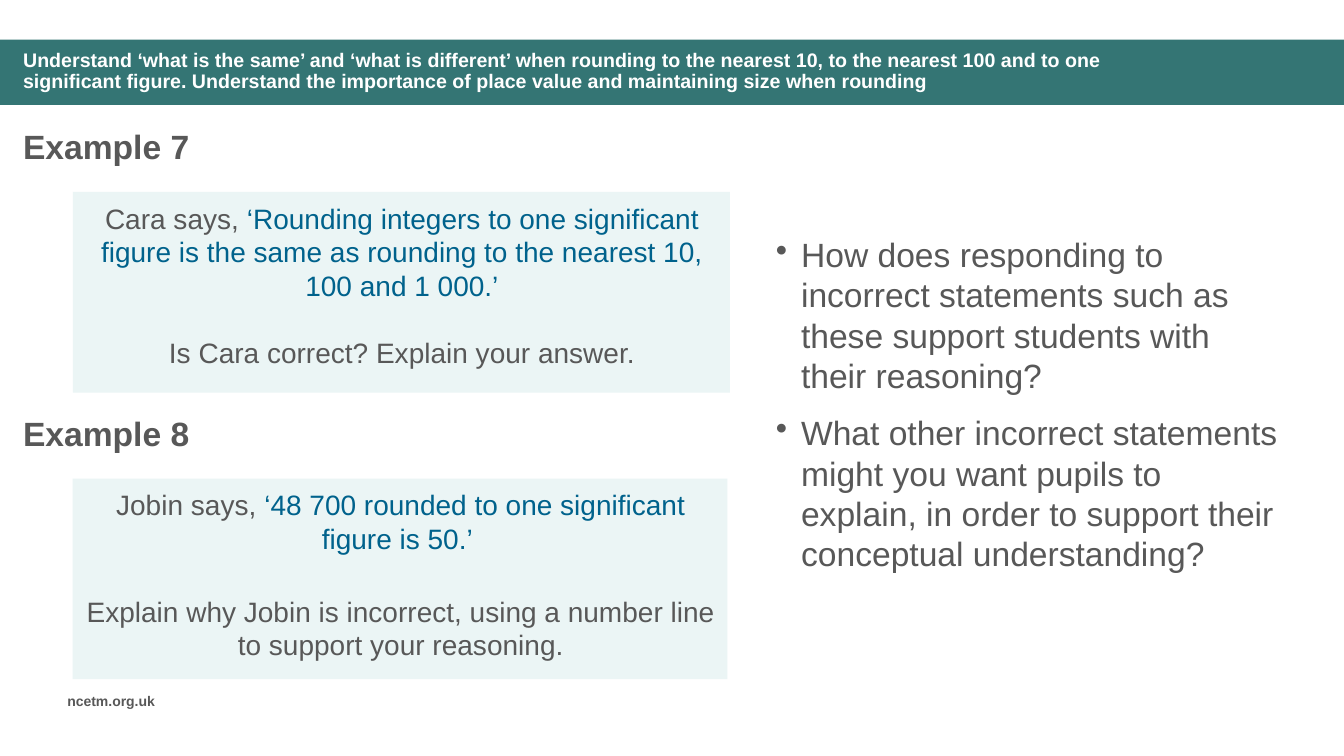
"""Build the slide on rounding statements with Examples 7 and 8."""
from lxml import etree
from pptx import Presentation
from pptx.dml.color import RGBColor
from pptx.enum.shapes import MSO_SHAPE
from pptx.enum.text import MSO_ANCHOR, PP_ALIGN
from pptx.oxml.ns import qn
from pptx.util import Pt

COLOURS = {
    "banner": "347574",
    "panel": "EBF5F5",
    "text": "585858",
    "quote": "00628C",
    "white": "FFFFFF",
}

presentation = Presentation()
presentation.slide_width = Pt(960)
presentation.slide_height = Pt(540)
slide = presentation.slides.add_slide(presentation.slide_layouts[6])


def add_block(left, top, width, height, fill):
    block = slide.shapes.add_shape(
        MSO_SHAPE.RECTANGLE, Pt(left), Pt(top), Pt(width), Pt(height))
    block.shadow.inherit = False
    block.fill.solid()
    block.fill.fore_color.rgb = RGBColor.from_string(COLOURS[fill])
    block.line.fill.background()


def add_text(box, paragraphs, size, bold=False, colour="text", anchor=MSO_ANCHOR.TOP):
    frame = slide.shapes.add_textbox(*[Pt(length) for length in box]).text_frame
    frame.word_wrap = True
    frame.vertical_anchor = anchor
    for index, text in enumerate(paragraphs):
        paragraph = frame.paragraphs[0] if index == 0 else frame.add_paragraph()
        paragraph.text = text
        paragraph.font.name = "Arial"
        paragraph.font.size = Pt(size)
        paragraph.font.bold = bold
        paragraph.font.color.rgb = RGBColor.from_string(COLOURS[colour])
    return frame.paragraphs


add_block(0, 28.3, 960, 46.7, "banner")
title = add_text(
    (9.4, 24.5, 833.8, 53.3),
    ["Understand ‘what is the same’ and ‘what is different’ when rounding to the "
     "nearest 10, to the nearest 100 and to one significant figure. Understand the "
     "importance of place value and maintaining size when rounding"],
    14, bold=True, colour="white", anchor=MSO_ANCHOR.MIDDLE)
title[0].line_spacing = 0.9

add_text((41, 491, 87.1, 19.4), ["ncetm.org.uk"], 10, bold=True)

examples = [
    ("Example 7", 86.4, 469.4, "Cara says, ",
     "‘Rounding integers to one significant figure is the same as rounding to the "
     "nearest 10, 100 and 1 000.’",
     "Is Cara correct? Explain your answer.", 0),
    ("Example 8", 291.2, 467.6, "Jobin says, ",
     "‘48 700 rounded to one significant figure is 50.’ ",
     "Explain why Jobin is incorrect, using a number line to support your reasoning.", 4),
]
for heading, top, width, speaker, quote, task, task_gap in examples:
    add_text((9.4, top, 479.5, 36), [heading], 24, bold=True)
    add_block(52, top + 50.7, width, 143.3, "panel")
    statement, question = add_text(
        (53.3, top + 53.8, width - 1.6, 130), [speaker, task], 20)
    quote_run = statement.add_run()
    quote_run.text = quote
    quote_run.font.color.rgb = RGBColor.from_string(COLOURS["quote"])
    statement.alignment = question.alignment = PP_ALIGN.CENTER
    statement.space_after = Pt(24)
    question.space_before = Pt(task_gap)

prompts = add_text(
    (537.1, 136.8, 385.2, 303.1),
    ["How does responding to incorrect statements such as these support students "
     "with their reasoning?",
     "What other incorrect statements might you want pupils to explain, in order to "
     "support their conceptual understanding?"],
    24, anchor=MSO_ANCHOR.MIDDLE)
for prompt in prompts:
    prompt.space_after = Pt(12)
    properties = prompt._p.get_or_add_pPr()
    properties.set("marL", str(Pt(28)))
    properties.set("indent", str(Pt(-18)))
    bullet = etree.Element(qn("a:buChar"), char="•")
    properties.find(qn("a:defRPr")).addprevious(bullet)

presentation.save("out.pptx")
